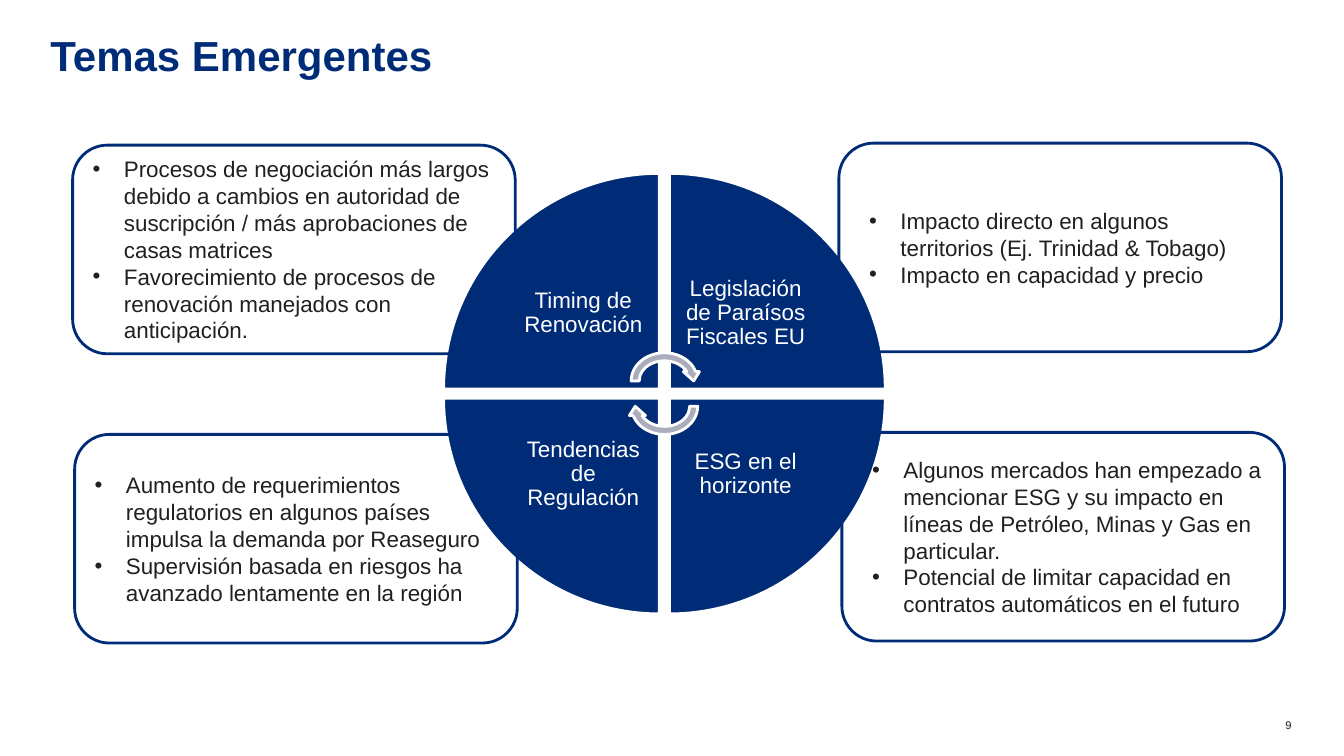
"""Build the slide "Temas Emergentes": a four-part wheel with a box of notes per part."""
from dataclasses import dataclass
from typing import Any

from lxml.etree import SubElement
from pptx import Presentation
from pptx.dml.color import RGBColor
from pptx.enum.shapes import MSO_SHAPE as Shp
from pptx.enum.text import MSO_ANCHOR as Anchor, PP_ALIGN as Align
from pptx.oxml.ns import qn
from pptx.util import Inches, Pt

COLORS = {"navy": "002C77", "grey": "ABADBD", "text": "202020", "white": "FFFFFF"}
FONTS = {
    "title": {"size": Pt(30), "bold": True},
    "body": {"size": Pt(16)},
    "number": {"size": Pt(8)},
}
LEFTS, TOPS, WEDGE = (4.4, 6.64), (1.72, 3.95), 2.14
LABEL, LABEL_SHIFT = 1.51, 0.63
BOX_W, BOX_H, INDENT = 4.39, 2.07, 0.31


@dataclass(frozen=True)
class Topic:
    """One quarter of the wheel and its box of notes."""
    label: str
    col: int
    row: int
    rotation: int
    box_left: float
    box_top: float
    box_inset: float
    notes: tuple[str, ...]


@dataclass(frozen=True)
class Arrow:
    """One of the curved arrows at the hub."""
    top: float
    rotation: int


TOPICS = (
    Topic("Timing de Renovación", 0, 0, 0, 0.72, 1.44, 0.1, (
        "Procesos de negociación más largos debido a cambios en autoridad de "
        "suscripción / más aprobaciones de casas matrices",
        "Favorecimiento de procesos de renovación manejados con anticipación.")),
    Topic("Legislación de Paraísos Fiscales EU", 1, 0, 90, 8.32, 1.42, 0.2, (
        "Impacto directo en algunos territorios (Ej. Trinidad & Tobago)",
        "Impacto en capacidad y precio")),
    Topic("ESG en el horizonte", 1, 1, 180, 8.35, 4.29, 0.2, (
        "Algunos mercados han empezado a mencionar ESG y su impacto en líneas de "
        "Petróleo, Minas y Gas en particular.",
        "Potencial de limitar capacidad en contratos automáticos en el futuro")),
    Topic("Tendencias de Regulación", 0, 1, 270, 0.74, 4.31, 0.1, (
        "Aumento de requerimientos regulatorios en algunos países impulsa la "
        "demanda por Reaseguro",
        "Supervisión basada en riesgos ha avanzado lentamente en la región")),
)
ARROWS = (Arrow(3.46, 0), Arrow(3.71, 180))


def rgb(name: str) -> RGBColor:
    """Return a named colour."""
    return RGBColor.from_string(COLORS[name])


def apply(target: Any, values: dict[str, Any]) -> None:
    """Set each value as an attribute of the target."""
    for name, value in values.items():
        setattr(target, name, value)


def set_frame(tf: Any, x: float, y: float, anchor: Any) -> None:
    """Set wrapping, insets and anchor of a text frame."""
    apply(tf, {"word_wrap": True, "vertical_anchor": anchor,
               "margin_left": Inches(x), "margin_right": Inches(min(x, 0.12)),
               "margin_top": Inches(y), "margin_bottom": Inches(y)})


def write(p: Any, text: str, font: str, color: str, align: Any,
          spacing: float = 1.0) -> None:
    """Write one formatted run into a paragraph."""
    apply(p, {"alignment": align, "line_spacing": spacing})
    r = p.add_run()
    r.text = text
    apply(r.font, {"name": "Arial", **FONTS[font]})
    r.font.color.rgb = rgb(color)


def add_bullet(p: Any) -> None:
    """Give a paragraph a hanging bullet."""
    ppr = p._p.get_or_add_pPr()
    ppr.set("marL", str(Inches(INDENT)))
    ppr.set("indent", str(-Inches(INDENT)))
    SubElement(ppr, qn("a:buFont")).set("typeface", "Arial")
    SubElement(ppr, qn("a:buChar")).set("char", "•")


def add_shape(s: Any, kind: Any, at: tuple[float, ...], fill: str | None,
              line: str, rotation: int = 0) -> Any:
    """Add a flat preset shape."""
    sp = s.shapes.add_shape(kind, *map(Inches, at))
    apply(sp, {"rotation": rotation})
    sp.shadow.inherit = False
    if fill:
        sp.fill.solid()
        sp.fill.fore_color.rgb = rgb(fill)
    else:
        sp.fill.background()
    sp.line.color.rgb = rgb(line)
    sp.line.width = Pt(2)
    return sp


def add_quarter(s: Any, topic: Topic) -> None:
    """Add a wedge of the wheel with its label."""
    left, top = LEFTS[topic.col], TOPS[topic.row]
    add_shape(s, Shp.PIE_WEDGE, (left, top, WEDGE, WEDGE), "navy", "white",
              topic.rotation)
    x = left + LABEL_SHIFT * (1 - topic.col)
    y = top + LABEL_SHIFT * (1 - topic.row)
    tf = s.shapes.add_textbox(*map(Inches, (x, y, LABEL, LABEL))).text_frame
    set_frame(tf, 0.12, 0.12, Anchor.MIDDLE)
    write(tf.paragraphs[0], topic.label, "body", "white", Align.CENTER, 0.9)


def add_notes(s: Any, topic: Topic) -> None:
    """Add the rounded box with the notes of a topic."""
    sp = add_shape(s, Shp.ROUNDED_RECTANGLE,
                   (topic.box_left, topic.box_top, BOX_W, BOX_H), None, "navy")
    tf = sp.text_frame
    set_frame(tf, topic.box_inset, 0.05, Anchor.MIDDLE)
    tf.margin_right = Inches(0.1)
    for i, note in enumerate(topic.notes):
        p = tf.add_paragraph() if i else tf.paragraphs[0]
        add_bullet(p)
        write(p, note, "body", "text", Align.LEFT)


def main() -> None:
    """Build and save the slide."""
    prs = Presentation()
    prs.slide_width, prs.slide_height = Inches(13.33), Inches(7.5)
    s = prs.slides.add_slide(prs.slide_layouts[5])

    title = s.shapes.title
    apply(title, {"left": Inches(0.5), "top": Inches(0.39),
                  "width": Inches(12.31), "height": Inches(0.54)})
    set_frame(title.text_frame, 0, 0, Anchor.TOP)
    write(title.text_frame.paragraphs[0], "Temas Emergentes", "title", "navy",
          Align.LEFT, 0.8)

    for topic in TOPICS:
        add_quarter(s, topic)
    for arrow in ARROWS:
        add_shape(s, Shp.CIRCULAR_ARROW, (6.22, arrow.top, 0.74, 0.64), "grey",
                  "white", arrow.rotation)
    for topic in TOPICS:
        add_notes(s, topic)

    tf = s.shapes.add_textbox(*map(Inches, (12.5, 7.13, 0.31, 0.13))).text_frame
    set_frame(tf, 0, 0, Anchor.TOP)
    write(tf.paragraphs[0], "9", "number", "text", Align.RIGHT)
    prs.save("out.pptx")


if __name__ == "__main__":
    main()
